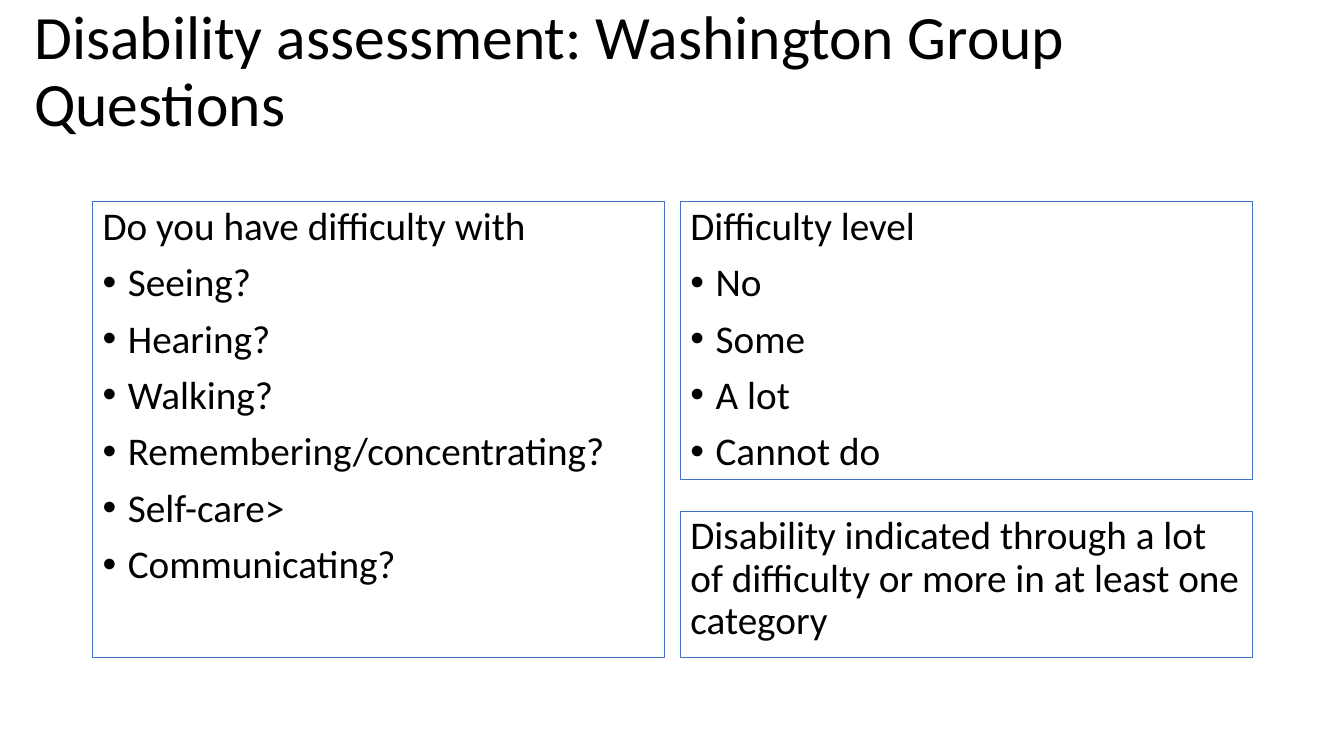
"""Build the slide on disability assessment with the Washington Group Questions."""
from dataclasses import dataclass

import lxml.etree
import pptx
import pptx.dml.color
import pptx.enum.text
import pptx.oxml.ns
import pptx.slide
import pptx.text.text
import pptx.util

FONT = "Calibri"
TEXT_COLOR = "000000"
BORDER_COLOR = "4472C4"
COLUMN_WIDTH = 5.67
LEFT_COLUMN = 0.92
RIGHT_COLUMN = 6.75
PANEL_TOP = 2
PANEL_BOTTOM = 6.52
NOTE_TOP = 5.07
BULLET_INDENT = 0.25


@dataclass(frozen=True)
class Panel:
    left: float
    top: float
    width: float
    height: float
    heading: str
    bullets: tuple[str, ...] = ()
    size: int = 28
    space_before: int = 10
    bordered: bool = True
    anchor: pptx.enum.text.MSO_ANCHOR = pptx.enum.text.MSO_ANCHOR.TOP


PANELS = (
    Panel(0.24, 0, 13.01, 1.45, "Disability assessment: Washington Group Questions",
          size=44, space_before=0, bordered=False,
          anchor=pptx.enum.text.MSO_ANCHOR.MIDDLE),
    Panel(LEFT_COLUMN, PANEL_TOP, COLUMN_WIDTH, PANEL_BOTTOM - PANEL_TOP,
          "Do you have difficulty with",
          ("Seeing?", "Hearing?", "Walking?", "Remembering/concentrating?",
           "Self-care>", "Communicating?")),
    Panel(RIGHT_COLUMN, PANEL_TOP, COLUMN_WIDTH, 2.76, "Difficulty level",
          ("No", "Some", "A lot", "Cannot do")),
    Panel(RIGHT_COLUMN, NOTE_TOP, COLUMN_WIDTH, PANEL_BOTTOM - NOTE_TOP,
          "Disability indicated through a lot of difficulty or more "
          "in at least one category"),
)


def color(value: str) -> pptx.dml.color.RGBColor:
    return pptx.dml.color.RGBColor.from_string(value)


def add_bullet(paragraph: pptx.text.text._Paragraph) -> None:
    properties = paragraph._p.get_or_add_pPr()
    indent = pptx.util.Inches(BULLET_INDENT)
    properties.set("marL", str(indent))
    properties.set("indent", str(-indent))
    font = lxml.etree.SubElement(properties, pptx.oxml.ns.qn("a:buFont"))
    font.set("typeface", "Arial")
    bullet = lxml.etree.SubElement(properties, pptx.oxml.ns.qn("a:buChar"))
    bullet.set("char", "•")


def write_paragraph(paragraph: pptx.text.text._Paragraph, text: str, panel: Panel) -> None:
    paragraph.line_spacing = 0.9
    paragraph.space_before = pptx.util.Pt(panel.space_before)
    run = paragraph.add_run()
    run.text = text
    run.font.name = FONT
    run.font.size = pptx.util.Pt(panel.size)
    run.font.color.rgb = color(TEXT_COLOR)


def draw_panel(slide: pptx.slide.Slide, panel: Panel) -> None:
    shape = slide.shapes.add_textbox(
        *map(pptx.util.Inches, (panel.left, panel.top, panel.width, panel.height)))
    if panel.bordered:
        shape.line.color.rgb = color(BORDER_COLOR)
        shape.line.width = pptx.util.Pt(0.75)
    frame = shape.text_frame
    frame.word_wrap = True
    frame.auto_size = pptx.enum.text.MSO_AUTO_SIZE.NONE
    frame.vertical_anchor = panel.anchor
    write_paragraph(frame.paragraphs[0], panel.heading, panel)
    for text in panel.bullets:
        paragraph = frame.add_paragraph()
        write_paragraph(paragraph, text, panel)
        add_bullet(paragraph)


def main() -> None:
    presentation = pptx.Presentation()
    presentation.slide_width = pptx.util.Inches(13.33)
    presentation.slide_height = pptx.util.Inches(7.5)
    slide = presentation.slides.add_slide(presentation.slide_layouts[6])
    for panel in PANELS:
        draw_panel(slide, panel)
    presentation.save("out.pptx")


if __name__ == "__main__":
    main()
